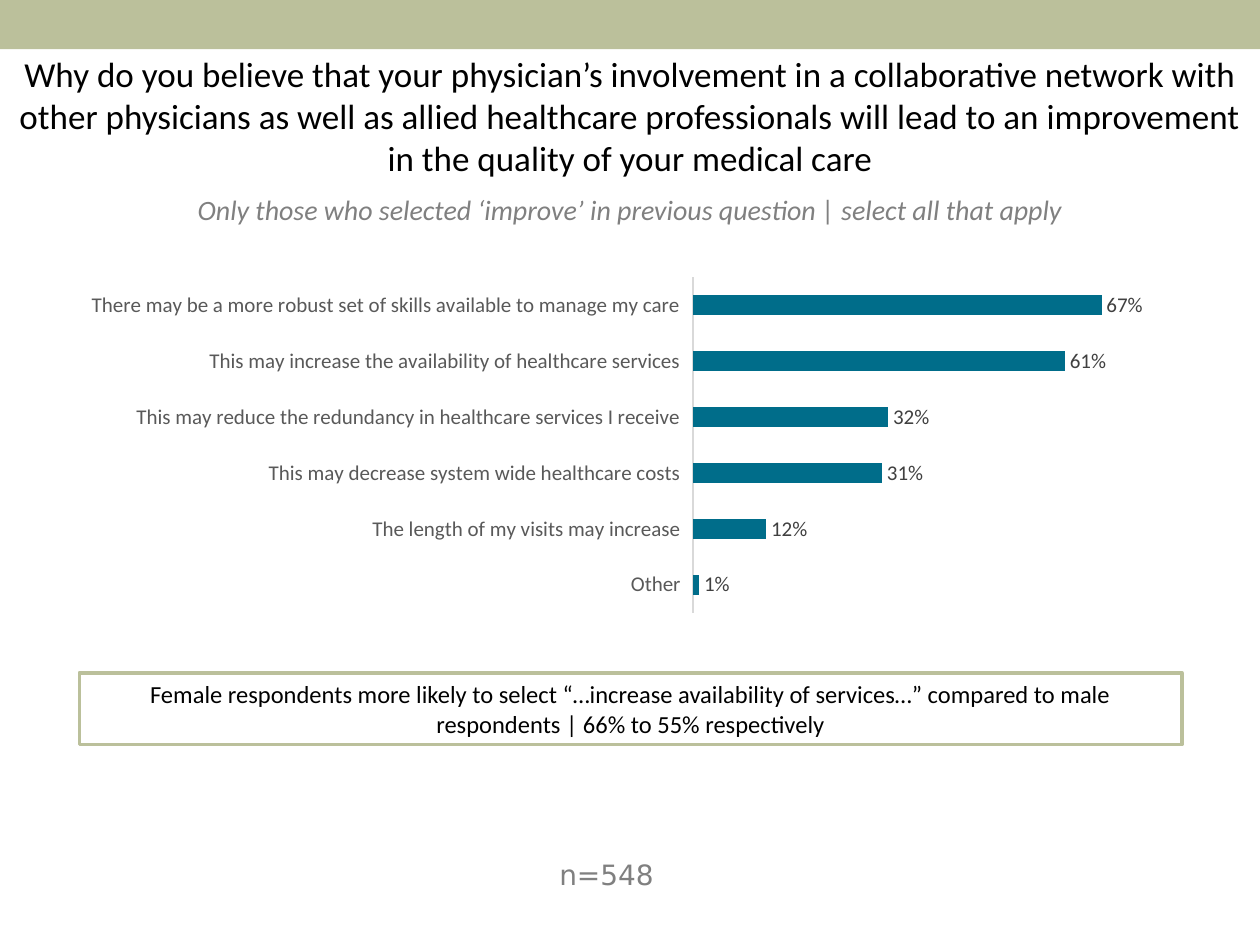
from lxml.etree import SubElement
from pptx import Presentation
from pptx.chart.data import CategoryChartData
from pptx.dml.color import RGBColor
from pptx.enum.chart import XL_CHART_TYPE, XL_LABEL_POSITION, XL_TICK_LABEL_POSITION, XL_TICK_MARK
from pptx.enum.shapes import MSO_SHAPE
from pptx.enum.text import MSO_ANCHOR, MSO_AUTO_SIZE, PP_ALIGN
from pptx.oxml.ns import qn
from pptx.util import Inches, Pt

SAGE = RGBColor(0xBB, 0xC0, 0x9B)
TEAL = RGBColor(0x00, 0x6D, 0x8A)
WHITE = RGBColor(0xFF, 0xFF, 0xFF)
BLACK = RGBColor(0x00, 0x00, 0x00)
GRAY = RGBColor(0x80, 0x80, 0x80)
LABEL_GRAY = RGBColor(0x59, 0x59, 0x59)
VALUE_GRAY = RGBColor(0x40, 0x40, 0x40)
AXIS_GRAY = RGBColor(0xD9, 0xD9, 0xD9)

REASONS = {
    "There may be a more robust set of skills available to manage my care": 0.67,
    "This may increase the availability of healthcare services": 0.61,
    "This may reduce the redundancy in healthcare services I receive": 0.32,
    "This may decrease system wide healthcare costs": 0.31,
    "The length of my visits may increase": 0.12,
    "Other": 0.01,
}
PLOT_AREA = {"x": 0.595, "y": 0.051, "w": 0.393, "h": 0.893}


def style_font(font, size, color, name="Calibri", **extra):
    values = {"size": Pt(size), "name": name, "bold": False, **extra}
    for key, value in values.items():
        setattr(font, key, value)
    font.color.rgb = color


def place(shape, box):
    for key, value in zip(("left", "top", "width", "height"), box):
        setattr(shape, key, Inches(value))


def write_text(shape, text, size, color, align=PP_ALIGN.CENTER, anchor=MSO_ANCHOR.TOP, **extra):
    frame = shape.text_frame
    settings = {"word_wrap": True, "auto_size": MSO_AUTO_SIZE.NONE, "vertical_anchor": anchor}
    for key, value in settings.items():
        setattr(frame, key, value)
    para = frame.paragraphs[0]
    para.alignment = align
    span = para.add_run()
    span.text = text
    style_font(span.font, size, color, **extra)


def add_rectangle(page, box, fill, line=None):
    shape = page.shapes.add_shape(MSO_SHAPE.RECTANGLE, *map(Inches, box))
    shape.shadow.inherit = False
    shape.fill.solid()
    shape.fill.fore_color.rgb = fill
    if line is None:
        shape.line.fill.background()
    else:
        shape.line.color.rgb = line
        shape.line.width = Pt(2)
    return shape


def add_title(page, box, text):
    title = page.shapes.title
    place(title, box)
    write_text(title, text, 20, BLACK)


def add_caption(page, box, text, size, **extra):
    caption = page.shapes.add_textbox(*map(Inches, box))
    write_text(caption, text, size, GRAY, **extra)


def add_finding(page, box, text):
    finding = add_rectangle(page, box, WHITE, SAGE)
    write_text(finding, text, 14, BLACK, anchor=MSO_ANCHOR.MIDDLE)


def fix_plot_area(chart):
    plot_area = chart.plots[0]._element.getparent()
    layout = plot_area.find(qn("c:layout"))
    if layout is None:
        layout = SubElement(plot_area, qn("c:layout"))
        plot_area.insert(0, layout)
    manual = SubElement(layout, qn("c:manualLayout"))
    settings = {"layoutTarget": "inner", "xMode": "edge", "yMode": "edge", **PLOT_AREA}
    for key, value in settings.items():
        SubElement(manual, qn(f"c:{key}")).set("val", str(value))


def add_reasons_chart(page, box):
    data = CategoryChartData(number_format="0%")
    data.categories = list(REASONS)
    data.add_series("Series 1", list(REASONS.values()))
    chart = page.shapes.add_chart(XL_CHART_TYPE.BAR_CLUSTERED, *map(Inches, box), data).chart
    chart.has_legend = False
    chart.has_title = False
    style_font(chart.font, 10, BLACK)

    categories = chart.category_axis
    categories.reverse_order = True
    categories.major_tick_mark = XL_TICK_MARK.NONE
    categories.tick_label_position = XL_TICK_LABEL_POSITION.LOW
    categories.format.line.color.rgb = AXIS_GRAY
    categories.format.line.width = Pt(0.75)
    style_font(categories.tick_labels.font, 12, LABEL_GRAY)

    values = chart.value_axis
    settings = {"visible": False, "has_major_gridlines": False,
                "minimum_scale": 0, "maximum_scale": 0.8}
    for key, value in settings.items():
        setattr(values, key, value)

    plot = chart.plots[0]
    plot.gap_width = 182
    plot.vary_by_categories = False
    bars = plot.series[0].format.fill
    bars.solid()
    bars.fore_color.rgb = TEAL
    plot.has_data_labels = True
    labels = plot.data_labels
    settings = {"show_value": True, "number_format": "0%", "number_format_is_linked": False,
                "position": XL_LABEL_POSITION.OUTSIDE_END}
    for key, value in settings.items():
        setattr(labels, key, value)
    style_font(labels.font, 12, VALUE_GRAY)
    fix_plot_area(chart)


def main():
    deck = Presentation()
    deck.slide_width, deck.slide_height = Inches(10), Inches(7.5)
    page = deck.slides.add_slide(deck.slide_layouts[5])
    add_rectangle(page, (0, 0, 10, 0.39), SAGE)
    add_title(page, (0, 0.37, 10, 1.1),
              "Why do you believe that your physician’s involvement in a collaborative network "
              "with other physicians as well as allied healthcare professionals will lead to "
              "an improvement in the quality of your medical care")
    add_caption(page, (0, 1.48, 10, 0.45),
                "Only those who selected ‘improve’ in previous question | select all that apply",
                16, italic=True)
    add_reasons_chart(page, (-0.36, 2.05, 9.85, 2.98))
    add_finding(page, (0.63, 5.34, 8.75, 0.57),
                "Female respondents more likely to select “…increase availability of services…” "
                "compared to male respondents | 66% to 55% respectively")
    add_caption(page, (4.34, 6.76, 1.32, 0.35), "n=548", 16,
                align=PP_ALIGN.LEFT, name="DejaVu Sans")
    deck.save("out.pptx")


if __name__ == "__main__":
    main()
